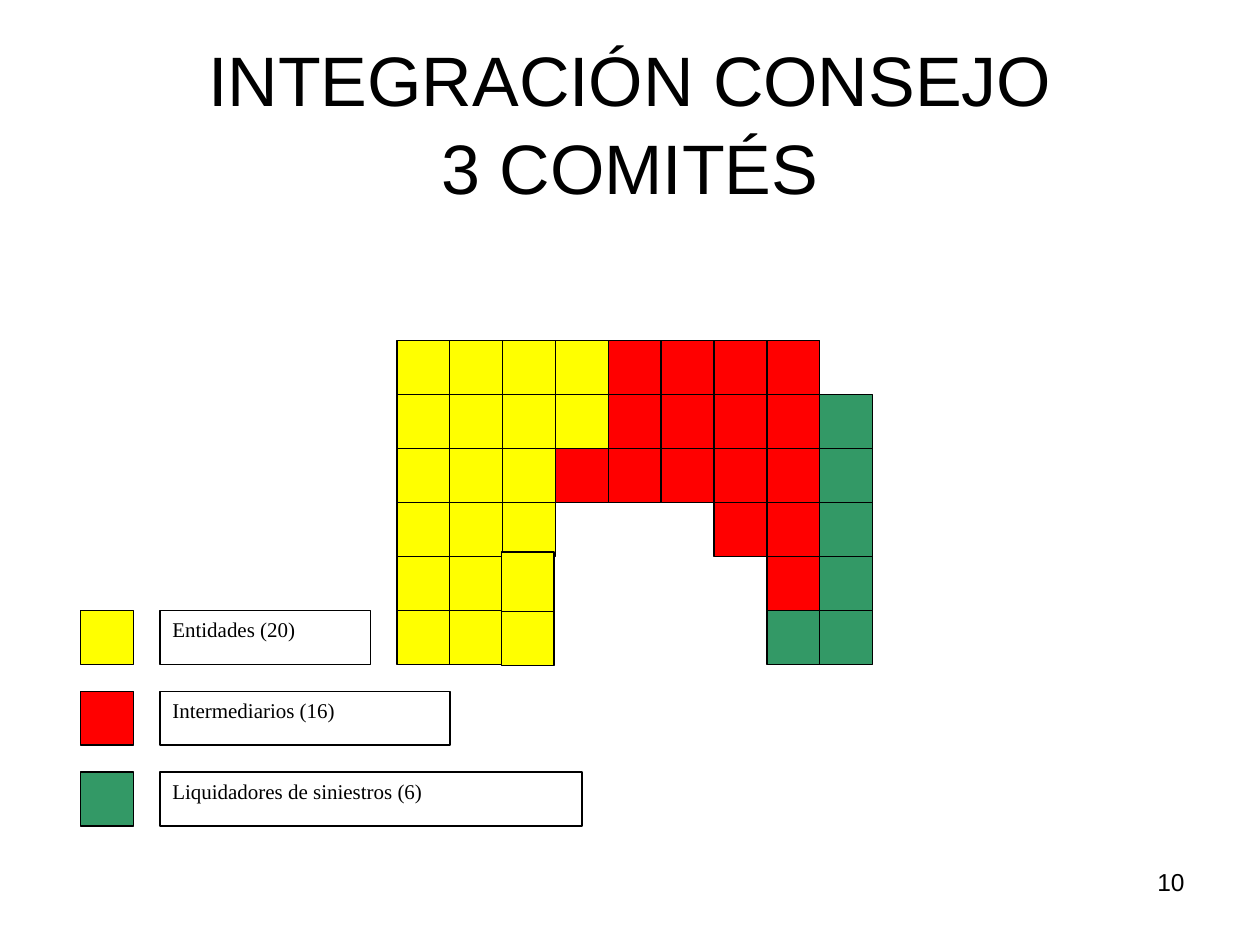
from pptx import Presentation
from pptx import util as u
from pptx.dml.color import RGBColor
from pptx.enum import shapes, text

COLOURS = {
    "black": "000000",
    "white": "FFFFFF",
    "entidades": "FFFF00",
    "intermediarios": "FF0000",
    "liquidadores": "339966",
}
GROUPS = {"E": "entidades", "I": "intermediarios", "L": "liquidadores"}

# Seats of the council, one letter per member
SEATS = [
    "EEEEIIII ",
    "EEEEIIIIL",
    "EEEIIIIIL",
    "EEE   IIL",
    "EE     IL",
    "EE     LL",
]
SEAT_LEFT, SEAT_TOP = 226.8, 194.6
SEAT_W, SEAT_H = 30.2, 30.84


def write(frame, content, size=12, font="Times New Roman", colour="black",
          align=text.PP_ALIGN.LEFT, anchor=text.MSO_ANCHOR.TOP, spacing=None):
    frame.word_wrap = True
    frame.vertical_anchor = anchor
    paragraph = frame.paragraphs[0]
    paragraph.text = content
    paragraph.alignment = align
    if spacing:
        paragraph.line_spacing = spacing
    for run in paragraph.runs:
        run.font.size = u.Pt(size)
        run.font.name = font
        run.font.color.rgb = RGBColor.from_string(COLOURS[colour])


class CouncilSlide:
    line_width = 0.75
    heading_font = "Arial"

    def __init__(self, slide):
        self.slide = slide

    def box(self, left, top, width, height, fill, label=None):
        rect = self.slide.shapes.add_shape(
            shapes.MSO_SHAPE.RECTANGLE,
            u.Pt(left), u.Pt(top), u.Pt(width), u.Pt(height))
        rect.shadow.inherit = False
        rect.fill.solid()
        rect.fill.fore_color.rgb = RGBColor.from_string(COLOURS[fill])
        rect.line.color.rgb = RGBColor.from_string(COLOURS["black"])
        rect.line.width = u.Pt(self.line_width)
        if label:
            write(rect.text_frame, label)

    def heading(self, left, top, width, height, content, **style):
        area = self.slide.shapes.add_textbox(
            u.Pt(left), u.Pt(top), u.Pt(width), u.Pt(height))
        write(area.text_frame, content, font=self.heading_font, **style)


def main():
    deck = Presentation()
    deck.slide_width, deck.slide_height = u.Pt(720), u.Pt(540)
    council = CouncilSlide(deck.slides.add_slide(deck.slide_layouts[6]))

    # Page number and title
    council.heading(516, 492, 168, 37.5, "10", size=14,
                    align=text.PP_ALIGN.RIGHT)
    council.heading(36, 21.6, 648, 95, "INTEGRACIÓN CONSEJO\v3 COMITÉS",
                    size=40, align=text.PP_ALIGN.CENTER,
                    anchor=text.MSO_ANCHOR.MIDDLE, spacing=1.04)

    # Seating plan
    for row, members in enumerate(SEATS):
        for column, member in enumerate(members):
            if member in GROUPS:
                council.box(SEAT_LEFT + column * SEAT_W,
                            SEAT_TOP + row * SEAT_H,
                            SEAT_W, SEAT_H, GROUPS[member])

    # Legend
    legend = [("entidades", "Entidades (20)", 120.5),
              ("intermediarios", "Intermediarios (16)", 165.8),
              ("liquidadores", "Liquidadores de siniestros (6)", 241.2)]
    for index, (group, label, width) in enumerate(legend):
        top = 348.8 + index * 46.2
        council.box(46, top, SEAT_W, SEAT_H, group)
        council.box(91.4, top, width, SEAT_H, "white", label)

    # Two added seats, slightly off the grid
    for top, height in ((315.4, 36.7), (349.4, SEAT_H)):
        council.box(286.4, top, SEAT_W, height, "entidades")

    deck.save("out.pptx")


if __name__ == "__main__":
    main()
